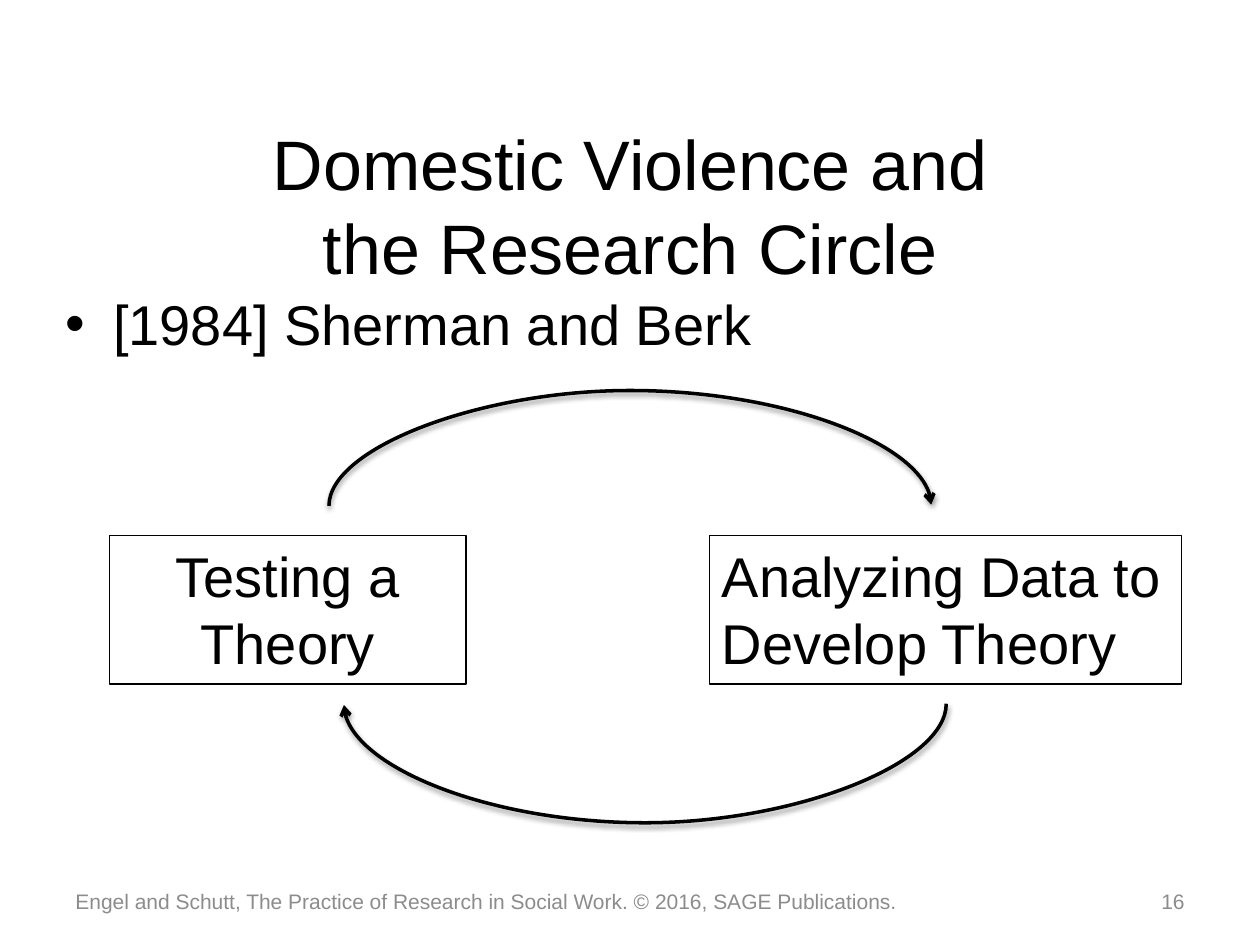
from lxml.etree import SubElement
from pptx import Presentation
from pptx.dml.color import RGBColor
from pptx.enum.shapes import MSO_CONNECTOR, MSO_SHAPE
from pptx.enum.text import MSO_ANCHOR, PP_ALIGN
from pptx.oxml import parse_xml
from pptx.oxml.ns import nsdecls, qn
from pptx.util import Inches, Pt

COLORS = {"ink": "000000", "footer": "8C8C8C"}
FONT = "Arial"
ARC_THICKNESS = 0.01


def color(name):
    return RGBColor.from_string(COLORS[name])


def write_text(shape, text, size=32, ink="ink", align=PP_ALIGN.LEFT,
               anchor=MSO_ANCHOR.TOP, bullet=False):
    """Each newline starts a paragraph; a vertical tab breaks a line."""
    frame = shape.text_frame
    frame.word_wrap = True
    frame.vertical_anchor = anchor
    for index, line in enumerate(text.split("\n")):
        para = frame.add_paragraph() if index else frame.paragraphs[0]
        para.text = line
        para.alignment = align
        if bullet:
            add_bullet(para)
        for span in para.runs:
            span.font.name = FONT
            span.font.size = Pt(size)
            span.font.color.rgb = color(ink)


def add_bullet(para, indent=0.38):
    properties = para._p.get_or_add_pPr()
    properties.set("marL", str(Inches(indent)))
    properties.set("indent", str(-Inches(indent)))
    SubElement(properties, qn("a:buFont"), typeface=FONT)
    SubElement(properties, qn("a:buChar"), char="•")


def add_text(page, text, left, top, width, height, **text_format):
    box = page.shapes.add_textbox(Inches(left), Inches(top),
                                  Inches(width), Inches(height))
    write_text(box, text, **text_format)


def add_stage(page, text, left, width, **text_format):
    """Outlined box for one stage of the research circle."""
    box = page.shapes.add_shape(MSO_SHAPE.RECTANGLE, Inches(left), Inches(4.25),
                                Inches(width), Inches(1.18))
    box.shadow.inherit = False
    box.fill.background()
    box.line.color.rgb = color("ink")
    box.line.width = Pt(0.75)
    write_text(box, text, **text_format)


def add_arc_arrow(page, center_x, center_y, span, bulge, reverse=False):
    """Curved connector turned a quarter, bulging down, or up if reversed."""
    start = (center_x - ARC_THICKNESS / 2, center_y - span / 2)
    end = (center_x + ARC_THICKNESS / 2, center_y + span / 2)
    if reverse:
        start, end = end, start
    arrow = page.shapes.add_connector(
        MSO_CONNECTOR.CURVE, *(Inches(value) for value in start + end))
    arrow.line.color.rgb = color("ink")
    arrow.line.width = Pt(2)
    properties = arrow._element.spPr
    properties.find(qn("a:xfrm")).set("rot", str(90 * 60000))

    # Depth of the bulge, relative to the connector's thickness
    guides = properties.find(qn("a:prstGeom")).get_or_add_avLst()
    adjustment = round(bulge / ARC_THICKNESS * 100000)
    SubElement(guides, qn("a:gd"), name="adj1", fmla=f"val {adjustment}")

    # Arrowhead and soft shadow
    SubElement(properties.find(qn("a:ln")), qn("a:tailEnd"), type="arrow")
    properties.append(parse_xml(
        f'<a:effectLst {nsdecls("a")}>'
        f'<a:outerShdw blurRad="{Pt(3.1)}" dist="{Pt(1.6)}" dir="5400000" '
        f'rotWithShape="0"><a:srgbClr val="{COLORS["ink"]}">'
        '<a:alpha val="38000"/></a:srgbClr></a:outerShdw></a:effectLst>'))


def main():
    deck = Presentation()
    deck.slide_width, deck.slide_height = Inches(10), Inches(7.5)
    page = deck.slides.add_slide(deck.slide_layouts[6])

    # Title and bullet
    add_text(page, "Domestic Violence and\vthe Research Circle", 0.5, 1.08, 9, 1.08,
             size=40, align=PP_ALIGN.CENTER, anchor=MSO_ANCHOR.MIDDLE)
    add_text(page, "[1984] Sherman and Berk", 0.42, 2.25, 9, 4.45, bullet=True)

    # Footer and page number
    footer = {"size": 12, "ink": "footer", "anchor": MSO_ANCHOR.MIDDLE}
    add_text(page, "Engel and Schutt, The Practice of Research in Social Work. "
             "© 2016, SAGE Publications.", 0.5, 6.95, 8.42, 0.4, **footer)
    add_text(page, "16", 9.01, 6.95, 0.49, 0.4, align=PP_ALIGN.RIGHT, **footer)

    # Research circle
    add_stage(page, "Testing a Theory", 0.87, 2.83, align=PP_ALIGN.CENTER)
    add_stage(page, "Analyzing Data to\nDevelop Theory", 5.63, 3.75)
    add_arc_arrow(page, 5.12, 5.59, span=4.78, bulge=0.96)
    add_arc_arrow(page, 5, 4.01, span=4.78, bulge=0.93, reverse=True)

    deck.save("out.pptx")


if __name__ == "__main__":
    main()
